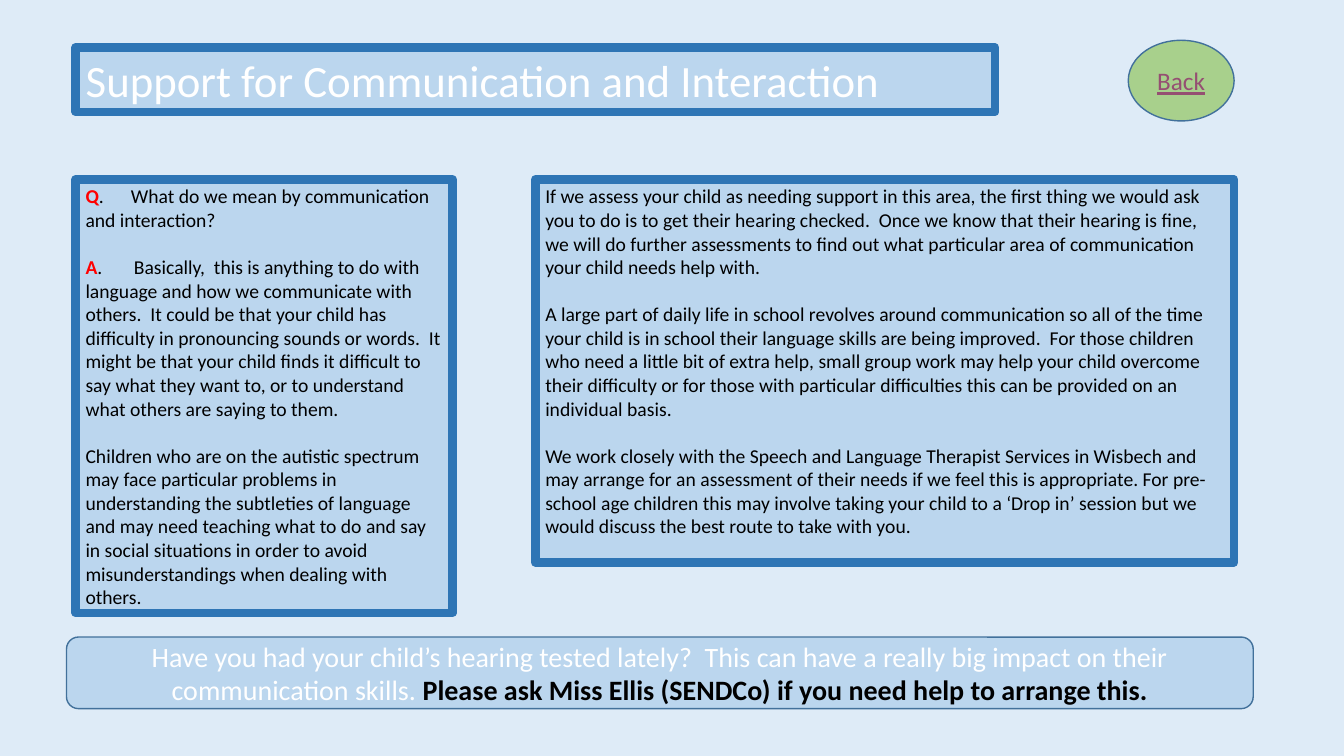
from lxml.etree import SubElement
from pptx import Presentation
from pptx.dml.color import RGBColor
from pptx.enum.shapes import MSO_SHAPE as SHAPE
from pptx.enum.text import MSO_ANCHOR as ANCHOR, MSO_AUTO_SIZE, PP_ALIGN as ALIGN
from pptx.oxml.ns import qn
from pptx.util import Inches, Pt

BACKGROUND = RGBColor(0xDE, 0xEB, 0xF7)
PANEL = RGBColor(0xBB, 0xD6, 0xEE)
BORDER = RGBColor(0x2E, 0x75, 0xB5)
THIN_BORDER = RGBColor(0x42, 0x71, 0x9B)
GREEN = RGBColor(0xA8, 0xD0, 0x8C)
PURPLE = RGBColor(0x95, 0x4F, 0x72)
RED = RGBColor(0xFF, 0x00, 0x00)
BLACK = RGBColor(0x00, 0x00, 0x00)
WHITE = RGBColor(0xFF, 0xFF, 0xFF)

FONT = "Calibri"
LEFT, RIGHT = 0.75, 12.24
PANEL_TOP = 1.78
PARAGRAPH_GAP = 17

QUESTION = "What do we mean by communication and interaction?"
ANSWER = (
    "Basically,  this is anything to do with language and how we communicate with "
    "others.  It could be that your child has difficulty in pronouncing sounds or "
    "words.  It might be that your child finds it difficult to say what they want to, "
    "or to understand what others are saying to them."
)
AUTISM = (
    "Children who are on the autistic spectrum may face particular problems in "
    "understanding the subtleties of language and may need teaching what to do and say "
    "in social situations in order to avoid misunderstandings when dealing with others."
)
SUPPORT = [
    "If we assess your child as needing support in this area, the first thing we would "
    "ask you to do is to get their hearing checked.  Once we know that their hearing is "
    "fine, we will do further assessments to find out what particular area of "
    "communication your child needs help with.",
    "A large part of daily life in school revolves around communication so all of the "
    "time your child is in school their language skills are being improved.  For those "
    "children who need a little bit of extra help, small group work may help your child "
    "overcome their difficulty or for those with particular difficulties this can be "
    "provided on an individual basis.",
    "We work closely with the Speech and Language Therapist Services in Wisbech and may "
    "arrange for an assessment of their needs if we feel this is appropriate. For "
    "pre-school age children this may involve taking your child to a ‘Drop in’ session "
    "but we would discuss the best route to take with you.",
]
HEARING = (
    "Have you had your child’s hearing tested lately?  This can have a really big "
    "impact on their communication skills. "
)
CONTACT = "Please ask Miss Ellis (SENDCo) if you need help to arrange this."


def style_shape(sp, fill, line, width, anchor):
    sp.shadow.inherit = False
    sp.fill.solid()
    sp.fill.fore_color.rgb = fill
    sp.line.color.rgb = line
    sp.line.width = Pt(width)
    SubElement(sp._element.spPr.find(qn("a:ln")), qn("a:round"))
    tf = sp.text_frame
    tf.word_wrap = True
    tf.auto_size = MSO_AUTO_SIZE.NONE
    tf.vertical_anchor = anchor


def add_box(slide, kind, box, fill=PANEL, line=THIN_BORDER, width=1, anchor=ANCHOR.MIDDLE):
    sp = slide.shapes.add_shape(kind, *map(Inches, box))
    style_shape(sp, fill, line, width, anchor)
    return sp


def add_run(p, text, size, color, bold=False, underline=False):
    r = p.add_run()
    r.text = text
    r.font.name = FONT
    r.font.size = Pt(size)
    r.font.color.rgb = color
    r.font.bold = bold
    r.font.underline = underline


def set_tab(p, position):
    tabs = SubElement(p._p.get_or_add_pPr(), qn("a:tabLst"))
    SubElement(tabs, qn("a:tab"), pos=str(Inches(position)), algn="l")


def add_title(slide, box):
    title = slide.shapes.title
    title.left, title.top, title.width, title.height = map(Inches, box)
    style_shape(title, PANEL, BORDER, 6, ANCHOR.TOP)
    p = title.text_frame.paragraphs[0]
    p.alignment = ALIGN.LEFT
    add_run(p, "Support for Communication and Interaction", 32, WHITE)


def add_back_button(slide, box):
    p = add_box(slide, SHAPE.OVAL, box, fill=GREEN).text_frame.paragraphs[0]
    p.alignment = ALIGN.CENTER
    add_run(p, "Back", 18, PURPLE, underline=True)


def add_text_panel(slide, box, entries):
    """Each entry is (red label or None, tab position, text)."""
    sp = add_box(slide, SHAPE.RECTANGLE, box, line=BORDER, width=6, anchor=ANCHOR.TOP)
    tf = sp.text_frame
    for i, (label, tab, text) in enumerate(entries):
        p = tf.add_paragraph() if i else tf.paragraphs[0]
        p.alignment = ALIGN.LEFT
        p.space_before = Pt(PARAGRAPH_GAP if i else 0)
        if label:
            set_tab(p, tab)
            add_run(p, label, 14, RED, bold=True)
            add_run(p, ".\t", 14, BLACK)
        add_run(p, text, 14, BLACK)


def add_hearing_banner(slide, box):
    p = add_box(slide, SHAPE.ROUNDED_RECTANGLE, box).text_frame.paragraphs[0]
    p.alignment = ALIGN.CENTER
    add_run(p, HEARING, 20, WHITE)
    add_run(p, CONTACT, 20, BLACK, bold=True)


def main():
    prs = Presentation()
    prs.slide_width, prs.slide_height = Inches(13.33), Inches(7.5)
    slide = prs.slides.add_slide(prs.slide_layouts[5])
    slide.background.fill.solid()
    slide.background.fill.fore_color.rgb = BACKGROUND

    add_title(slide, (LEFT, 0.47, 9.12, 0.64))
    add_back_button(slide, (RIGHT - 1.05, 0.4, 1.05, 0.8))
    add_text_panel(
        slide,
        (LEFT, PANEL_TOP, 3.74, 4.3),
        [("Q", 0.45, QUESTION), ("A", 0.48, ANSWER), (None, 0, AUTISM)],
    )
    add_text_panel(
        slide,
        (RIGHT - 6.93, PANEL_TOP, 6.93, 3.8),
        [(None, 0, text) for text in SUPPORT],
    )
    add_hearing_banner(slide, (0.66, 6.32, 11.77, 0.71))
    prs.save("out.pptx")


if __name__ == "__main__":
    main()
